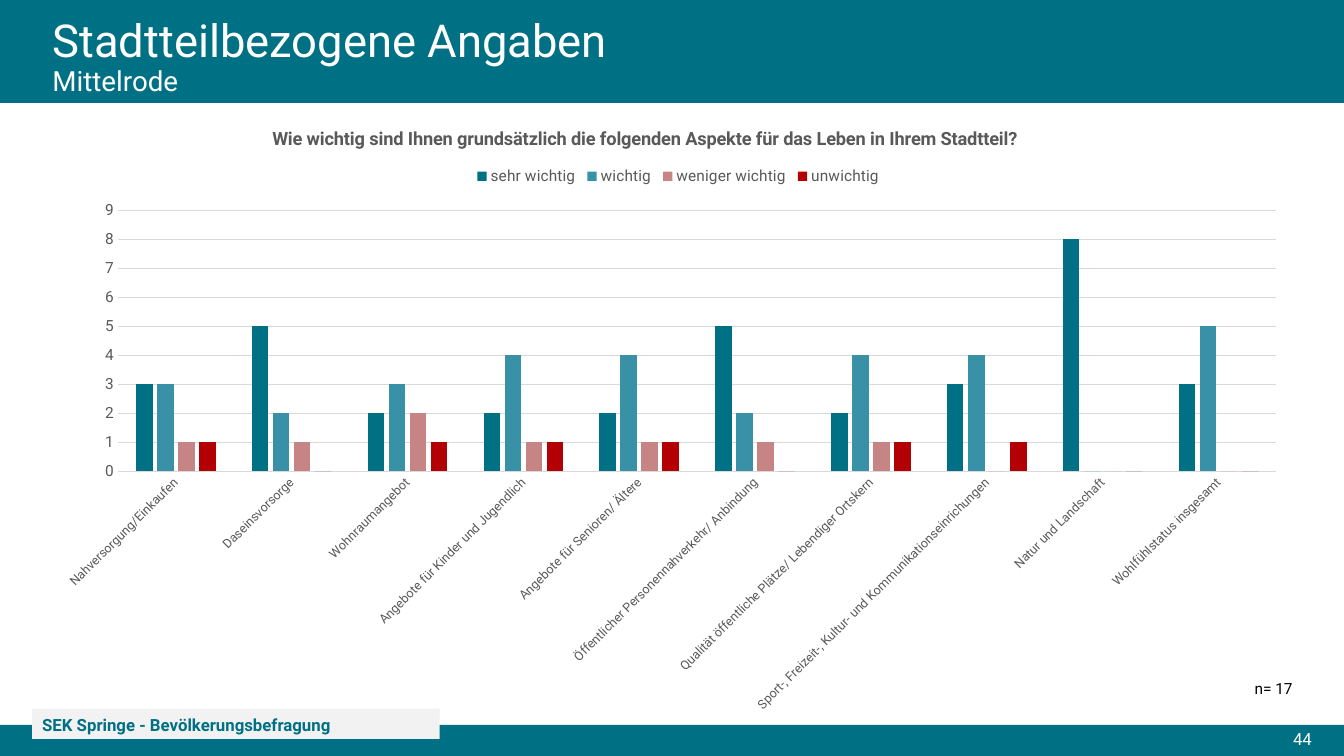
from pptx import Presentation
from pptx.chart.data import CategoryChartData
from pptx.dml.color import RGBColor
from pptx.enum.chart import XL_CHART_TYPE as CT, XL_LEGEND_POSITION as LP, XL_TICK_MARK as TM
from pptx.enum.shapes import MSO_SHAPE
from pptx.enum.text import MSO_ANCHOR as ANCHOR, MSO_AUTO_SIZE as AUTO, PP_ALIGN as ALIGN
from pptx.oxml import parse_xml
from pptx.oxml.ns import nsdecls, qn
from pptx.util import Inches, Pt

FONT = "Roboto"
COLORS = {
    "teal": "007085", "blue": "3891A7", "rose": "C78484", "red": "B20005",
    "label": "F2F2F2", "grid": "D9D9D9", "gray": "595959",
    "white": "FFFFFF", "black": "000000",
}
CATEGORIES = [
    "Nahversorgung/Einkaufen",
    "Daseinsvorsorge",
    "Wohnraumangebot",
    "Angebote für Kinder und Jugendlich",
    "Angebote für Senioren/ Ältere",
    "Öffentlicher Personennahverkehr/ Anbindung",
    "Qualität öffentliche Plätze/ Lebendiger Ortskern",
    "Sport-, Freizeit-, Kultur- und Kommunikationseinrichungen",
    "Natur und Landschaft",
    "Wohlfühlstatus insgesamt",
]
SERIES = [
    ("sehr wichtig", (3, 5, 2, 2, 2, 5, 2, 3, 8, 3), "teal"),
    ("wichtig", (3, 2, 3, 4, 4, 2, 4, 4, 0, 5), "blue"),
    ("weniger wichtig", (1, 1, 2, 1, 1, 1, 1, 0, 0, 0), "rose"),
    ("unwichtig", (1, 0, 1, 1, 1, 0, 1, 1, 0, 0), "red"),
]
QUESTION = ("Wie wichtig sind Ihnen grundsätzlich die folgenden Aspekte "
            "für das Leben in Ihrem Stadtteil?")


def rgb(name):
    return RGBColor.from_string(COLORS[name])


def style(font, size, color, bold=False):
    font.name, font.size, font.bold = FONT, Pt(size), bold
    font.color.rgb = rgb(color)


def add_bar(s, x, y, w, h, color):
    sp = s.shapes.add_shape(MSO_SHAPE.RECTANGLE, Inches(x), Inches(y), Inches(w), Inches(h))
    sp.shadow.inherit = False
    sp.fill.solid()
    sp.fill.fore_color.rgb = rgb(color)
    sp.line.fill.background()
    return sp


def write(sp, text, size, color, align=ALIGN.LEFT, anchor=ANCHOR.MIDDLE, bold=False):
    tf = sp.text_frame
    tf.word_wrap, tf.vertical_anchor = True, anchor
    tf.text = text
    p = tf.paragraphs[0]
    p.alignment = align
    for r in p.runs:
        style(r.font, size, color, bold)
    return p


def add_text(s, x, y, w, h, *args, **kwargs):
    sp = s.shapes.add_textbox(Inches(x), Inches(y), Inches(w), Inches(h))
    return write(sp, *args, **kwargs)


def set_title(s, heading, district):
    sp = s.shapes.title
    sp.left, sp.top, sp.width, sp.height = (Inches(v) for v in (0.42, 0.21, 11.5, 0.73))
    p = write(sp, f"{heading}\v{district}", 32.4, "white")
    p.line_spacing = 0.9
    p.runs[1].font.size = Pt(19.8)
    sp.text_frame.auto_size = AUTO.NONE
    sp.element.getparent().append(sp.element)


def place(part, index, target=None, **fractions):
    for old in part.findall(qn("c:layout")):
        part.remove(old)
    inner = f'<c:layoutTarget val="{target}"/>' if target else ""
    inner += "".join(f'<c:{k}Mode val="edge"/>' for k in "xy")
    inner += "".join(f'<c:{k} val="{v}"/>' for k, v in fractions.items())
    part.insert(index, parse_xml(
        f'<c:layout {nsdecls("c")}><c:manualLayout>{inner}</c:manualLayout></c:layout>'))


def style_axes(chart, cat_xml):
    cat, val = chart.category_axis, chart.value_axis
    for axis, size in ((cat, 9), (val, 11)):
        axis.major_tick_mark = axis.minor_tick_mark = TM.NONE
        style(axis.tick_labels.font, size, "gray")
    val.minimum_scale, val.maximum_scale, val.major_unit = 0, 9, 1
    val.format.line.fill.background()
    for line in (cat.format.line, val.major_gridlines.format.line):
        line.color.rgb, line.width = rgb("grid"), Pt(0.75)
    body = cat_xml.find(qn("c:txPr")).find(qn("a:bodyPr"))
    body.set("rot", "-2700000")
    body.set("vert", "horz")


def add_importance_chart(s):
    data = CategoryChartData()
    data.categories = CATEGORIES
    for name, values, _ in SERIES:
        data.add_series(name, values)
    chart = s.shapes.add_chart(CT.COLUMN_CLUSTERED, Inches(0.42), Inches(1.04),
                               Inches(12.49), Inches(6.16), data).chart
    style(chart.font, 11, "black")
    plot = chart.plots[0]
    plot.gap_width, plot.overlap, plot.vary_by_categories = 219, -27, False
    for series, (_, _, color) in zip(plot.series, SERIES):
        series.format.fill.solid()
        series.format.fill.fore_color.rgb = rgb(color)
    chart.has_title = chart.has_legend = True
    tf = chart.chart_title.text_frame
    tf.text = QUESTION
    style(tf.paragraphs[0].runs[0].font, 13, "gray", True)
    chart.legend.position, chart.legend.include_in_layout = LP.TOP, False
    style(chart.legend.font, 11, "gray")
    root = chart.element.find(qn("c:chart"))
    plot_area = root.find(qn("c:plotArea"))
    style_axes(chart, plot_area.find(qn("c:catAx")))
    place(root.find(qn("c:title")), 1, x=0.18, y=0.03)
    place(root.find(qn("c:legend")), 1, x=0.34, y=0.09, w=0.33, h=0.05)
    place(plot_area, 0, "inner", x=0.06, y=0.17, w=0.92, h=0.42)


def main():
    """Build the survey slide for the district of Mittelrode."""
    prs = Presentation()
    prs.slide_width, prs.slide_height = Inches(13.33), Inches(7.5)
    s = prs.slides.add_slide(prs.slide_layouts[5])
    add_bar(s, 0, 0, 13.33, 1.02, "teal")
    add_bar(s, 0, 7.19, 13.33, 0.31, "teal")
    add_text(s, 8.72, 7.18, 4.39, 0.3, "44", 12, "white", ALIGN.RIGHT)
    label = add_bar(s, 0.32, 7.03, 4.04, 0.3, "label")
    p = write(label, "SEK Springe - Bevölkerungsbefragung", 12, "teal", bold=True)
    p.line_spacing = 1.07
    add_importance_chart(s)
    set_title(s, "Stadtteilbezogene Angaben", "Mittelrode")
    add_text(s, 12.31, 6.69, 0.61, 0.29, "n= 17", 11, "black", ALIGN.RIGHT, ANCHOR.TOP)
    prs.save("out.pptx")


if __name__ == "__main__":
    main()
